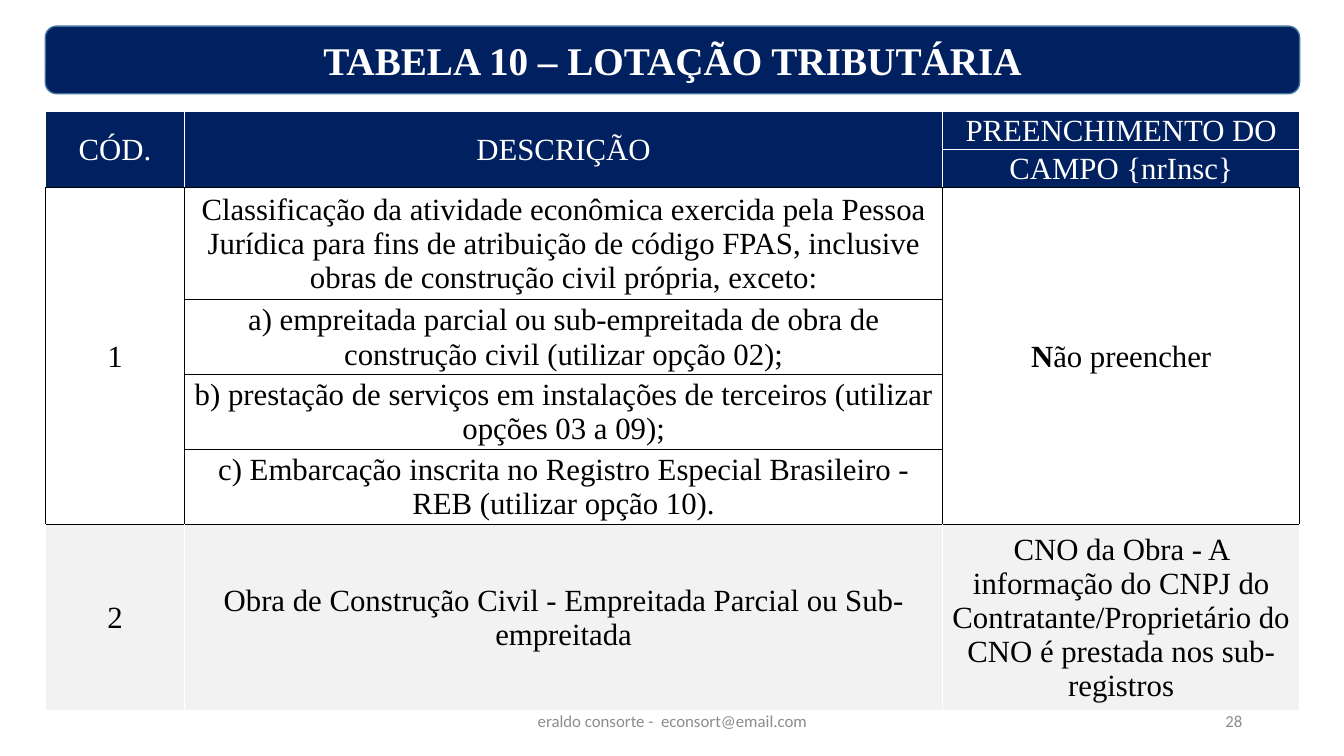
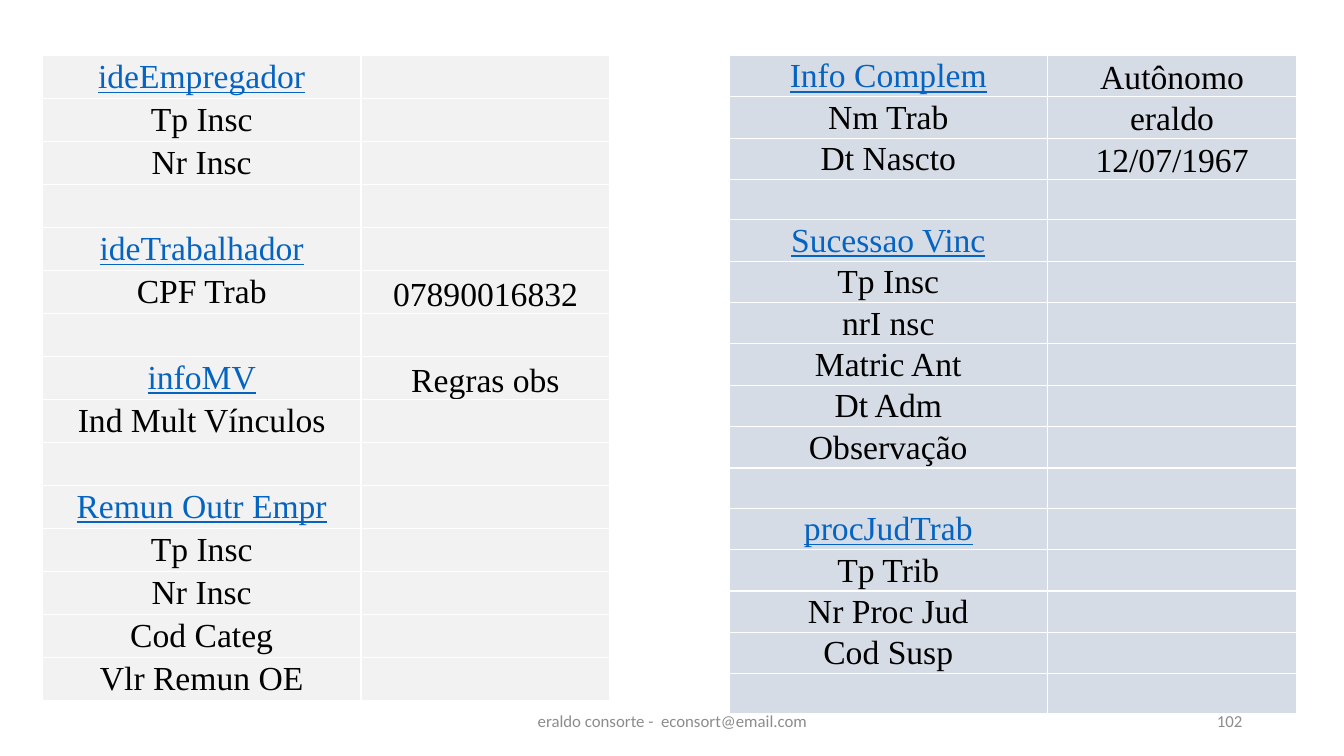
from lxml.etree import SubElement
from pptx import Presentation
from pptx.dml.color import RGBColor
from pptx.enum.shapes import MSO_SHAPE
from pptx.enum.text import MSO_ANCHOR, PP_ALIGN
from pptx.oxml.ns import qn
from pptx.util import Inches, Pt

NAVY = RGBColor(0x00, 0x20, 0x60)
TITLE_LINE = RGBColor(0x43, 0x73, 0x9E)
WHITE = RGBColor(0xFF, 0xFF, 0xFF)
BLACK = RGBColor(0x00, 0x00, 0x00)
PALE_GREY = RGBColor(0xF2, 0xF2, 0xF2)
PALE_BLUE = RGBColor(0xD6, 0xDC, 0xE5)
LINK_BLUE = RGBColor(0x05, 0x63, 0xC1)
FOOTER_GREY = RGBColor(0x8C, 0x8C, 0x8C)

SERIF = "Times New Roman"
SANS = "Calibri"
FOOTER = "eraldo consorte -  econsort@email.com"

HEADER_ROWS = 2
ALLOCATION_SIZE = 22
ALLOCATION_COLUMNS = [1.38, 7.52, 3.54]
ALLOCATION_HEIGHTS = [0.36, 0.36, 1.08, 0.72, 0.72, 0.72, 1.8]
ALLOCATION_ROWS = [
    ["CÓD.", "DESCRIÇÃO", "PREENCHIMENTO DO"],
    ["", "", "CAMPO {nrInsc}"],
    ["1", "Classificação da atividade econômica exercida pela Pessoa Jurídica para fins "
          "de atribuição de código FPAS, inclusive obras de construção civil própria, "
          "exceto:", "N"],
    ["", "a) empreitada parcial ou sub-empreitada de obra de construção civil "
         "(utilizar opção 02);", ""],
    ["", "b) prestação de serviços em instalações de terceiros (utilizar opções "
         "03 a 09);", ""],
    ["", "c) Embarcação inscrita no Registro Especial Brasileiro - REB (utilizar "
         "opção 10).", ""],
    ["2", "Obra de Construção Civil - Empreitada Parcial ou Sub-empreitada",
     "CNO da Obra - A informação do CNPJ do Contratante/Proprietário do CNO é "
     "prestada nos sub-registros"],
]

FIELD_SIZE = 24
FIELD_COLUMNS = [3.16, 2.47]
FIELD_TABLE_HEIGHT = 6.4
EMPLOYER_FIELDS = [
    ("ideEmpregador", ""), ("Tp Insc", ""), ("Nr Insc", ""), ("", ""),
    ("ideTrabalhador", ""), ("CPF Trab", "07890016832"), ("", ""),
    ("infoMV", "Regras obs"), ("Ind Mult Vínculos", ""), ("", ""),
    ("Remun Outr Empr", ""), ("Tp Insc", ""), ("Nr Insc", ""),
    ("Cod Categ", ""), ("Vlr Remun OE", ""),
]
WORKER_FIELDS = [
    ("Info Complem", "Autônomo"), ("Nm Trab", "eraldo"),
    ("Dt Nascto", "12/07/1967"), ("", ""),
    ("Sucessao Vinc", ""), ("Tp Insc", ""), ("nrI nsc", ""), ("Matric Ant", ""),
    ("Dt Adm", ""), ("Observação", ""), ("", ""),
    ("procJudTrab", ""), ("Tp Trib", ""), ("Nr Proc Jud", ""), ("Cod Susp", ""),
    ("", ""),
]


def style_font(font, name, size, color):
    font.name = name
    font.size = Pt(size)
    font.color.rgb = color


def add_footer_text(page, text, left, width, align):
    box = page.shapes.add_textbox(Inches(left), Inches(6.95), Inches(width), Inches(0.4))
    frame = box.text_frame
    frame.word_wrap = True
    frame.vertical_anchor = MSO_ANCHOR.MIDDLE
    frame.text = text
    para = frame.paragraphs[0]
    para.alignment = align
    style_font(para.font, SANS, 12, FOOTER_GREY)


def add_page(deck, number):
    """Add a blank page with the shared footer and its page number."""
    page = deck.slides.add_slide(deck.slide_layouts[6])
    add_footer_text(page, FOOTER, 4.42, 4.5, PP_ALIGN.CENTER)
    add_footer_text(page, number, 9.42, 3, PP_ALIGN.RIGHT)
    return page


def add_title(page, text):
    banner = page.shapes.add_shape(MSO_SHAPE.ROUNDED_RECTANGLE, Inches(0.45), Inches(0.26),
                                   Inches(12.44), Inches(0.67))
    banner.shadow.inherit = False
    banner.fill.solid()
    banner.fill.fore_color.rgb = NAVY
    banner.line.color.rgb = TITLE_LINE
    banner.line.width = Pt(1)
    frame = banner.text_frame
    frame.vertical_anchor = MSO_ANCHOR.MIDDLE
    frame.text = text
    para = frame.paragraphs[0]
    para.alignment = PP_ALIGN.CENTER
    style_font(para.font, SERIF, 28, WHITE)
    para.font.bold = True


def set_borders(cell, sides, top, bottom):
    properties = cell._tc.get_or_add_tcPr()
    for tag, color in (("lnL", sides), ("lnR", sides), ("lnT", top), ("lnB", bottom)):
        line = SubElement(properties, qn(f"a:{tag}"), w=str(Pt(1)))
        fill = SubElement(line, qn("a:solidFill"))
        SubElement(fill, qn("a:srgbClr"), val=str(color))


def add_span(cell, text, size, color):
    """Append text with its own font, since row heights are measured from the runs."""
    span = cell.text_frame.paragraphs[0].add_run()
    span.text = text
    style_font(span.font, SERIF, size, color)
    return span


def fill_cell(cell, text, size, color, fill):
    cell.fill.solid()
    cell.fill.fore_color.rgb = fill
    cell.margin_left = cell.margin_right = cell.margin_top = Inches(0.01)
    cell.margin_bottom = 0
    cell.vertical_anchor = MSO_ANCHOR.MIDDLE
    cell.text_frame.paragraphs[0].alignment = PP_ALIGN.CENTER
    if text:
        add_span(cell, text, size, color)


def add_plain_table(page, left, top, widths, heights):
    """Add a table of the given column widths and row heights, without banding."""
    table = page.shapes.add_table(len(heights), len(widths), Inches(left), Inches(top),
                                  Inches(sum(widths)), Inches(sum(heights))).table
    table.first_row = table.horz_banding = False
    for column, width in zip(table.columns, widths):
        column.width = Inches(width)
    for row, height in zip(table.rows, heights):
        row.height = Inches(height)
    return table


def add_allocation_table(page):
    table = add_plain_table(page, 0.45, 1.11, ALLOCATION_COLUMNS, ALLOCATION_HEIGHTS)
    last = len(ALLOCATION_ROWS) - 1
    for r, texts in enumerate(ALLOCATION_ROWS):
        if r < HEADER_ROWS:
            fill, color, sides = NAVY, WHITE, WHITE
        elif r < last:
            fill, color, sides = WHITE, BLACK, BLACK
        else:
            fill, color, sides = PALE_GREY, BLACK, WHITE
        top = BLACK if r >= HEADER_ROWS else WHITE
        bottom = BLACK if HEADER_ROWS - 1 <= r < last else WHITE
        for c, text in enumerate(texts):
            cell = table.cell(r, c)
            set_borders(cell, sides, top, bottom)
            fill_cell(cell, text, ALLOCATION_SIZE, color, fill)

    for column, first, final in ((0, 0, 1), (1, 0, 1), (0, 2, 5), (2, 2, 5)):
        table.cell(first, column).merge(table.cell(final, column))

    rule_cell = table.cell(HEADER_ROWS, 2)
    rule_cell.text_frame.paragraphs[0].runs[0].font.bold = True
    add_span(rule_cell, "ão preencher", ALLOCATION_SIZE, BLACK)


def add_field_table(page, left, fields, fill):
    """Add field names and values; the first name of each group looks like a link."""
    heights = [FIELD_TABLE_HEIGHT / len(fields)] * len(fields)
    table = add_plain_table(page, left, 0.55, FIELD_COLUMNS, heights)
    starts_group = True
    for r, (name, value) in enumerate(fields):
        name_cell, value_cell = table.cell(r, 0), table.cell(r, 1)
        for cell, text in ((name_cell, name), (value_cell, value)):
            set_borders(cell, WHITE, WHITE, WHITE)
            fill_cell(cell, text, FIELD_SIZE, BLACK, fill)
        value_cell.vertical_anchor = MSO_ANCHOR.BOTTOM
        if starts_group and name:
            font = name_cell.text_frame.paragraphs[0].runs[0].font
            font.color.rgb = LINK_BLUE
            font.underline = True
        starts_group = not name


def main():
    deck = Presentation()
    deck.slide_width, deck.slide_height = Inches(13.33), Inches(7.5)

    page = add_page(deck, "28")
    add_allocation_table(page)
    add_title(page, "TABELA 10 – LOTAÇÃO TRIBUTÁRIA")

    page = add_page(deck, "102")
    add_field_table(page, 0.42, EMPLOYER_FIELDS, PALE_GREY)
    add_field_table(page, 7.23, WORKER_FIELDS, PALE_BLUE)

    deck.save("out.pptx")


if __name__ == "__main__":
    main()
